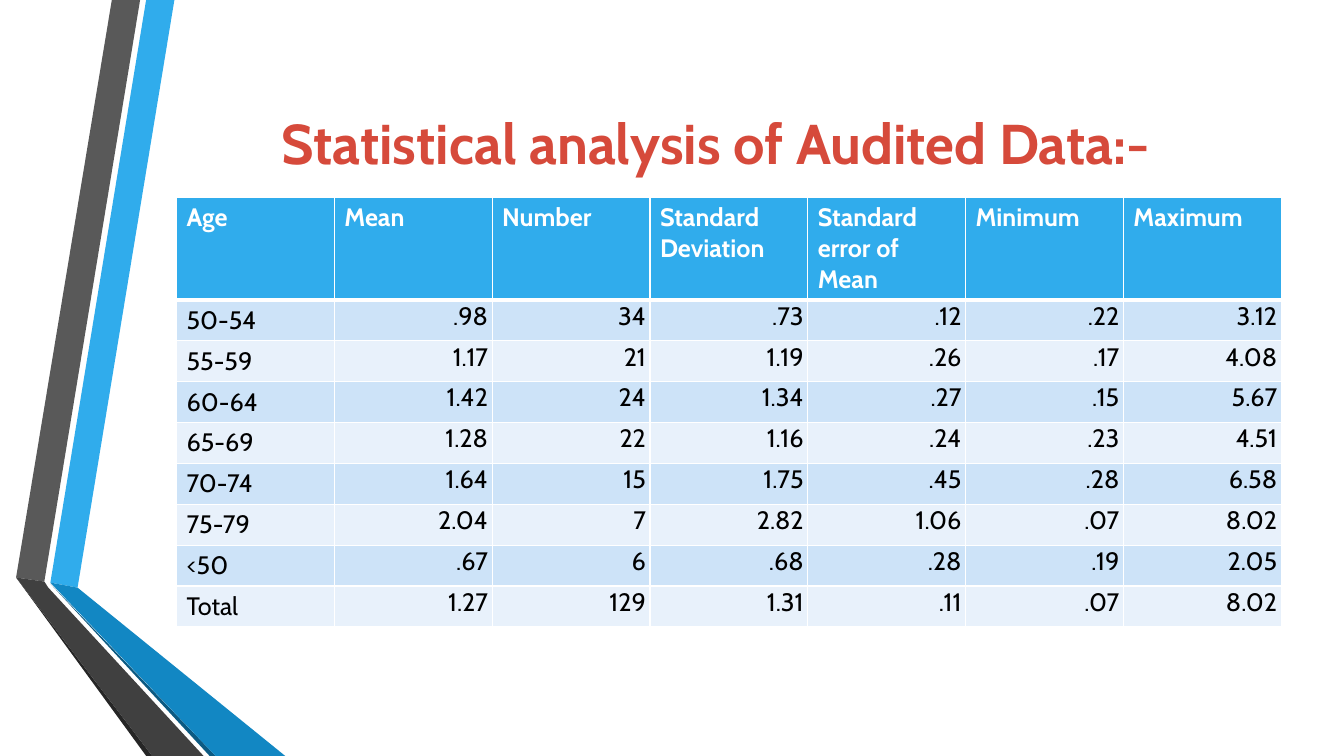
from dataclasses import dataclass

from lxml.etree import SubElement
from pptx import Presentation
from pptx.dml.color import RGBColor as Rgb
from pptx.enum.text import MSO_ANCHOR as Anchor, PP_ALIGN as Align
from pptx.oxml.ns import qn
from pptx.slide import Slide
from pptx.table import _Cell as Cell
from pptx.text.text import _Paragraph as Paragraph
from pptx.util import Inches, Pt


@dataclass(frozen=True)
class Theme:
    font: str = "Cabin"
    title_size: int = 40
    table_size: int = 18
    line_spacing: int = 16
    title: str = "D64A3B"
    header: str = "30ACEC"
    odd_row: str = "CDE3F8"
    even_row: str = "E8F1FB"
    ink: str = "000000"
    white: str = "FFFFFF"


@dataclass(frozen=True)
class Ribbon:
    color: str
    points: tuple[tuple[float, float], ...]


THEME = Theme()

RIBBONS = (
    Ribbon("30ACEC", ((0.5, 5.78), (0.77, 5.83), (1.73, 0), (1.45, 0))),
    Ribbon("595959", ((1.39, 0), (1.11, 0), (0.16, 5.73), (0.44, 5.77))),
    Ribbon("262626", ((0.16, 5.73), (1.45, 7.5), (1.51, 7.5))),
    Ribbon("0C5A82", ((0.5, 5.79), (2.08, 7.5), (2.14, 7.5))),
    Ribbon("1287C3", ((0.5, 5.78), (2.14, 7.5), (2.83, 7.5), (0.77, 5.83))),
    Ribbon("404040", ((2.02, 7.5), (0.48, 5.83), (0.44, 5.77), (0.16, 5.73), (1.51, 7.5))),
)

HEADINGS = ("Age", "Mean", "Number", "Standard Deviation",
            "Standard error of Mean", "Minimum", "Maximum")
AGE_GROUPS = (
    ("50-54", ".98", "34", ".73", ".12", ".22", "3.12"),
    ("55-59", "1.17", "21", "1.19", ".26", ".17", "4.08"),
    ("60-64", "1.42", "24", "1.34", ".27", ".15", "5.67"),
    ("65-69", "1.28", "22", "1.16", ".24", ".23", "4.51"),
    ("70-74", "1.64", "15", "1.75", ".45", ".28", "6.58"),
    ("75-79", "2.04", "7", "2.82", "1.06", ".07", "8.02"),
    ("<50", ".67", "6", ".68", ".28", ".19", "2.05"),
    ("Total", "1.27", "129", "1.31", ".11", ".07", "8.02"),
)

TABLE_WIDTH = 10.96
TABLE_HEIGHT = 4.24
HEADER_HEIGHT = 1.0


def add_run(paragraph: Paragraph, text: str, size: int, color: str, bold: bool) -> None:
    run = paragraph.add_run()
    run.text = text
    run.font.name = THEME.font
    run.font.size = Pt(size)
    run.font.bold = bold
    run.font.color.rgb = Rgb.from_string(color)


def add_ribbon(slide: Slide, ribbon: Ribbon) -> None:
    start, *rest = [(Inches(x), Inches(y)) for x, y in ribbon.points]
    builder = slide.shapes.build_freeform(*start)
    builder.add_line_segments(rest, close=True)
    blade = builder.convert_to_shape()
    blade.shadow.inherit = False
    blade.fill.solid()
    blade.fill.fore_color.rgb = Rgb.from_string(ribbon.color)
    blade.line.fill.background()


def add_title(slide: Slide, text: str) -> None:
    title = slide.shapes.title
    title.element.getparent().append(title.element)
    title.left, title.top = Inches(1.62), Inches(0.75)
    title.width, title.height = Inches(10.96), Inches(1.92)
    frame = title.text_frame
    frame.word_wrap = True
    frame.vertical_anchor = Anchor.MIDDLE
    frame.margin_top, frame.margin_bottom = Inches(0.05), Inches(0.65)
    frame.paragraphs[0].alignment = Align.CENTER
    add_run(frame.paragraphs[0], text, THEME.title_size, THEME.title, True)


def set_borders(cell: Cell, top: int, bottom: int) -> None:
    properties = cell._tc.get_or_add_tcPr()
    widths = {"a:lnL": 1, "a:lnR": 1, "a:lnT": top, "a:lnB": bottom}
    for side, width in widths.items():
        border = SubElement(properties, qn(side), w=str(Pt(width)))
        fill = SubElement(border, qn("a:solidFill"))
        SubElement(fill, qn("a:srgbClr"), val=THEME.white)


def fill_cell(cell: Cell, text: str, row: int, column: int) -> None:
    is_header = row == 0
    set_borders(cell, 3 if row == 1 else 1, 3 if is_header else 1)
    band = THEME.odd_row if row % 2 else THEME.even_row
    cell.fill.solid()
    cell.fill.fore_color.rgb = Rgb.from_string(THEME.header if is_header else band)
    paragraph = cell.text_frame.paragraphs[0]
    if not is_header and column:
        cell.vertical_anchor = Anchor.MIDDLE
        cell.margin_left = cell.margin_right = cell.margin_top = cell.margin_bottom = 0
        paragraph.alignment = Align.RIGHT
        paragraph.line_spacing = Pt(THEME.line_spacing)
        indents = paragraph._p.get_or_add_pPr()
        for side in ("marL", "marR"):
            indents.set(side, str(Inches(0.04)))
    add_run(paragraph, text, THEME.table_size,
            THEME.white if is_header else THEME.ink, is_header)


def add_statistics(slide: Slide) -> None:
    rows = (HEADINGS, *AGE_GROUPS)
    table = slide.shapes.add_table(
        len(rows), len(HEADINGS), Inches(1.75), Inches(1.96),
        Inches(TABLE_WIDTH), Inches(TABLE_HEIGHT)).table
    for column in table.columns:
        column.width = Inches(TABLE_WIDTH / len(HEADINGS))
    body_height = (TABLE_HEIGHT - HEADER_HEIGHT) / len(AGE_GROUPS)
    for r, values in enumerate(rows):
        table.rows[r].height = Inches(body_height if r else HEADER_HEIGHT)
        for c, value in enumerate(values):
            fill_cell(table.cell(r, c), value, r, c)


def main() -> None:
    deck = Presentation()
    deck.slide_width, deck.slide_height = Inches(13.33), Inches(7.5)
    slide = deck.slides.add_slide(deck.slide_layouts[5])
    for ribbon in RIBBONS:
        add_ribbon(slide, ribbon)
    add_title(slide, "Statistical analysis of Audited Data:-")
    add_statistics(slide)
    deck.save("out.pptx")


if __name__ == "__main__":
    main()
